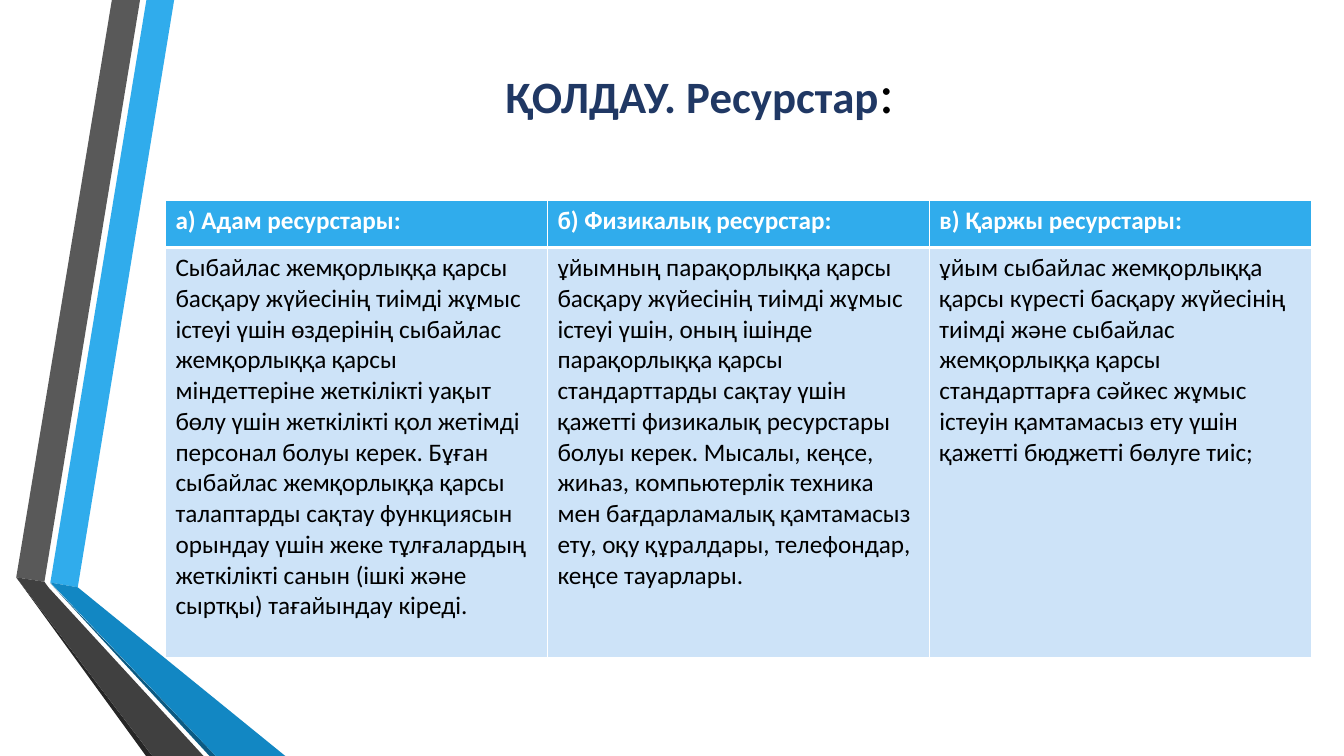
"""Build the slide on human, physical and financial support resources."""
from lxml.etree import SubElement
from pptx import Presentation
from pptx.dml.color import RGBColor
from pptx.enum.text import MSO_VERTICAL_ANCHOR as Anchor, PP_PARAGRAPH_ALIGNMENT as Align
from pptx.oxml.ns import qn
from pptx.util import Cm, Pt

WHITE = RGBColor(0xFF, 0xFF, 0xFF)
BLACK = RGBColor(0x00, 0x00, 0x00)
NAVY = RGBColor(0x20, 0x38, 0x64)
SKY = RGBColor(0x30, 0xAC, 0xEC)
BLUE = RGBColor(0x12, 0x87, 0xC3)
DEEP_BLUE = RGBColor(0x0C, 0x5A, 0x82)
PALE_BLUE = RGBColor(0xCD, 0xE3, 0xF8)
GREY = RGBColor(0x59, 0x59, 0x59)
DARK_GREY = RGBColor(0x40, 0x40, 0x40)
CHARCOAL = RGBColor(0x26, 0x26, 0x26)

RIBBONS = [
    (SKY, [(1.27, 14.68), (1.96, 14.8), (4.39, 0), (3.69, 0)]),
    (GREY, [(3.53, 0), (2.82, 0), (0.41, 14.55), (1.12, 14.66)]),
    (CHARCOAL, [(0.41, 14.55), (3.68, 19.05), (3.84, 19.05)]),
    (DEEP_BLUE, [(1.27, 14.7), (5.28, 19.05), (5.44, 19.05)]),
    (BLUE, [(1.27, 14.68), (5.44, 19.05), (7.19, 19.05), (1.96, 14.8)]),
    (DARK_GREY, [(5.13, 19.05), (1.22, 14.8), (1.12, 14.66), (0.41, 14.55), (3.84, 19.05)]),
]

TITLE = [
    ("ҚОЛДАУ. Ресурстар", {"size": Pt(32), "bold": True}, NAVY),
    (":", {"size": Pt(40), "bold": False}, BLACK),
]

RESOURCES = [
    ("а) Адам ресурстары:",
     "Сыбайлас жемқорлыққа қарсы басқару жүйесінің тиімді жұмыс істеуі үшін өздерінің "
     "сыбайлас жемқорлыққа қарсы міндеттеріне жеткілікті уақыт бөлу үшін жеткілікті қол "
     "жетімді персонал болуы керек. Бұған сыбайлас жемқорлыққа қарсы талаптарды сақтау "
     "функциясын орындау үшін жеке тұлғалардың жеткілікті санын (ішкі және сыртқы) "
     "тағайындау кіреді."),
    ("б) Физикалық ресурстар:",
     "ұйымның парақорлыққа қарсы басқару жүйесінің тиімді жұмыс істеуі үшін, оның ішінде "
     "парақорлыққа қарсы стандарттарды сақтау үшін қажетті физикалық ресурстары болуы керек. "
     "Мысалы, кеңсе, жиһаз, компьютерлік техника мен бағдарламалық қамтамасыз ету, оқу "
     "құралдары, телефондар, кеңсе тауарлары."),
    ("в) Қаржы ресурстары:",
     "ұйым сыбайлас жемқорлыққа қарсы күресті басқару жүйесінің тиімді және сыбайлас "
     "жемқорлыққа қарсы стандарттарға сәйкес жұмыс істеуін қамтамасыз ету үшін қажетті "
     "бюджетті бөлуге тиіс;"),
]

ROWS = [
    (Cm(1.19), SKY, WHITE, True, {"L": 1, "R": 1, "T": 1, "B": 3}),
    (Cm(10.33), PALE_BLUE, BLACK, False, {"L": 1, "R": 1, "T": 3, "B": 1}),
]


class SlidePainter:
    """Hold the font and the current slide, and draw its elements."""

    def __init__(self, page, font_name):
        self.page = page
        self.font_name = font_name

    def ribbon(self, color, points):
        """Draw a filled outline through points given in centimetres."""
        corners = [(Cm(x), Cm(y)) for x, y in points]
        builder = self.page.shapes.build_freeform(*corners[0])
        builder.add_line_segments(corners[1:], close=True)
        shape = builder.convert_to_shape()
        shape.shadow.inherit = False
        shape.fill.solid()
        shape.fill.fore_color.rgb = color
        shape.line.fill.background()

    def span(self, para, text, values, color):
        """Add a formatted run to a paragraph."""
        span = para.add_run()
        span.text = text
        for name, value in {"name": self.font_name, **values}.items():
            setattr(span.font, name, value)
        span.font.color.rgb = color

    def title(self, spans, left, top, width, height):
        """Add the centred title."""
        box = self.page.shapes.add_textbox(Cm(left), Cm(top), Cm(width), Cm(height))
        frame = box.text_frame
        for name, value in {"word_wrap": True, "vertical_anchor": Anchor.MIDDLE}.items():
            setattr(frame, name, value)
        para = frame.paragraphs[0]
        para.alignment = Align.CENTER
        for span in spans:
            self.span(para, *span)

    def borders(self, cell, widths):
        """Give a cell white edges, with widths in points by side."""
        properties = cell._tc.get_or_add_tcPr()
        for side, width in widths.items():
            edge = SubElement(properties, qn(f"a:ln{side}"), w=str(Pt(width)))
            fill = SubElement(edge, qn("a:solidFill"))
            SubElement(fill, qn("a:srgbClr"), val=str(WHITE))

    def table(self, columns, rows, left, top, width):
        """Add a table with equal columns and one style per row."""
        height = sum(row[0] for row in rows)
        table = self.page.shapes.add_table(
            len(rows), len(columns), Cm(left), Cm(top), Cm(width), height).table
        for row, (row_height, fill, color, bold, widths) in enumerate(rows):
            table.rows[row].height = row_height
            for column, texts in enumerate(columns):
                cell = table.cell(row, column)
                self.borders(cell, widths)
                cell.fill.solid()
                cell.fill.fore_color.rgb = fill
                para = cell.text_frame.paragraphs[0]
                self.span(para, texts[row], {"size": Pt(18), "bold": bold}, color)


def main():
    """Build and save the deck."""
    deck = Presentation()
    deck.slide_width, deck.slide_height = Cm(33.87), Cm(19.05)
    painter = SlidePainter(deck.slides.add_slide(deck.slide_layouts[6]), "Calibri")
    for color, points in RIBBONS:
        painter.ribbon(color, points)
    painter.title(TITLE, 3.71, 0.74, 27.84, 3.1)
    painter.table(RESOURCES, ROWS, 4.17, 5.05, 28.88)
    deck.save("out.pptx")


if __name__ == "__main__":
    main()
